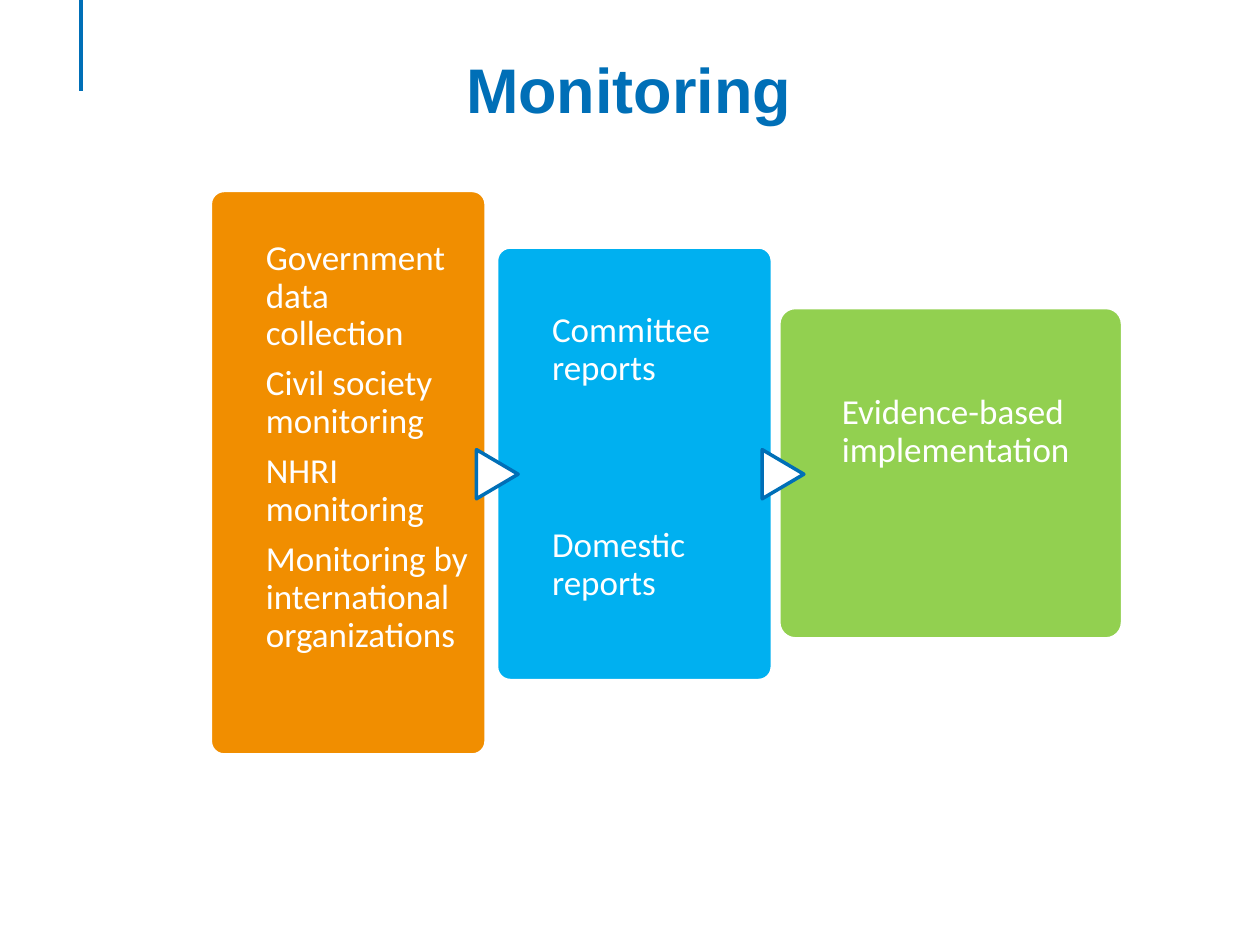
from dataclasses import dataclass

from lxml import etree
from pptx import Presentation
from pptx.dml.color import RGBColor
from pptx.enum.shapes import MSO_CONNECTOR, MSO_SHAPE
from pptx.enum.text import MSO_ANCHOR, PP_ALIGN
from pptx.oxml.ns import qn
from pptx.util import Cm, Pt

LINE = MSO_CONNECTOR.STRAIGHT
CARD, ARROW = MSO_SHAPE.ROUNDED_RECTANGLE, MSO_SHAPE.FLOWCHART_EXTRACT
TOP, CENTER, LEFT = MSO_ANCHOR.TOP, PP_ALIGN.CENTER, PP_ALIGN.LEFT


@dataclass(frozen=True)
class Theme:
    blue: RGBColor = RGBColor.from_string("006FB7")
    orange: RGBColor = RGBColor.from_string("F18E00")
    sky: RGBColor = RGBColor.from_string("00B0F0")
    green: RGBColor = RGBColor.from_string("92D050")
    white: RGBColor = RGBColor.from_string("FFFFFF")
    title_font: str = "Arial"
    body_font: str = "Calibri"
    title_size: Pt = Pt(36)
    body_size: Pt = Pt(20)
    line_width: Pt = Pt(2)


theme = Theme()
prs = Presentation()
prs.slide_width, prs.slide_height = Cm(25.4), Cm(19.05)
s = prs.slides.add_slide(prs.slide_layouts[6])


def add_shape(kind, x, y, w, h, fill, line):
    sp = s.shapes.add_shape(kind, Cm(x), Cm(y), Cm(w), Cm(h))
    sp.shadow.inherit = False
    sp.fill.solid()
    sp.fill.fore_color.rgb = fill
    sp.line.color.rgb = line
    sp.line.width = theme.line_width
    return sp


def add_text(x, y, w, h, inset, lines, font, size, color, align, bold=False, gap=0):
    tf = s.shapes.add_textbox(Cm(x), Cm(y), Cm(w), Cm(h)).text_frame
    tf.word_wrap = True
    tf.vertical_anchor = TOP
    tf.margin_left = tf.margin_right = tf.margin_bottom = 0
    tf.margin_top = Cm(inset)
    for i, line in enumerate(lines):
        p = tf.paragraphs[0] if i == 0 else tf.add_paragraph()
        p.alignment = align
        p.line_spacing = 0.9 if gap else 1.0
        p.space_after = Pt(gap)
        r = p.add_run()
        r.text = line
        r.font.name, r.font.size, r.font.bold = font, size, bold
        r.font.color.rgb = color


# Accent line
accent = s.shapes.add_connector(LINE, Cm(1.63), 0, Cm(1.63), Cm(1.83))
accent.line.color.rgb = theme.blue
accent.line.width = theme.line_width
etree.SubElement(accent._element.spPr, qn("a:effectLst"))

# Title
add_text(1.04, 0.76, 23.27, 3.02, 0.25, ["Monitoring"], theme.title_font,
         theme.title_size, theme.blue, CENTER, bold=True)

# Stages: card x, y, w, h, colour; text x, width, top inset, gap; lines
stages = [
    (4.24, 3.84, 5.56, 11.38, theme.orange, 5.36, 4.14, 1.0, 7,
     ["Government data collection", "Civil society monitoring",
      "NHRI monitoring", "Monitoring by international organizations"]),
    (10.01, 4.98, 5.56, 8.74, theme.sky, 11.13, 4.14, 1.31, 80,
     ["Committee reports", "Domestic reports"]),
    (15.7, 6.2, 6.93, 6.68, theme.green, 16.97, 5.18, 1.98, 7,
     ["Evidence-based implementation"]),
]
for i, (x, y, w, h, fill, text_x, text_w, inset, gap, lines) in enumerate(stages):
    card = add_shape(CARD, x, y, w, h, fill, theme.white)
    card.adjustments[0] = 0.05
    # Arrow from the previous stage
    if i:
        arrow = add_shape(ARROW, 3.77 + 5.76 * i, 9.14, 0.99, 0.84,
                          theme.white, theme.blue)
        arrow.rotation = 90
    add_text(text_x, y, text_w, h, inset, lines, theme.body_font,
             theme.body_size, theme.white, LEFT, gap=gap)

prs.save("out.pptx")
